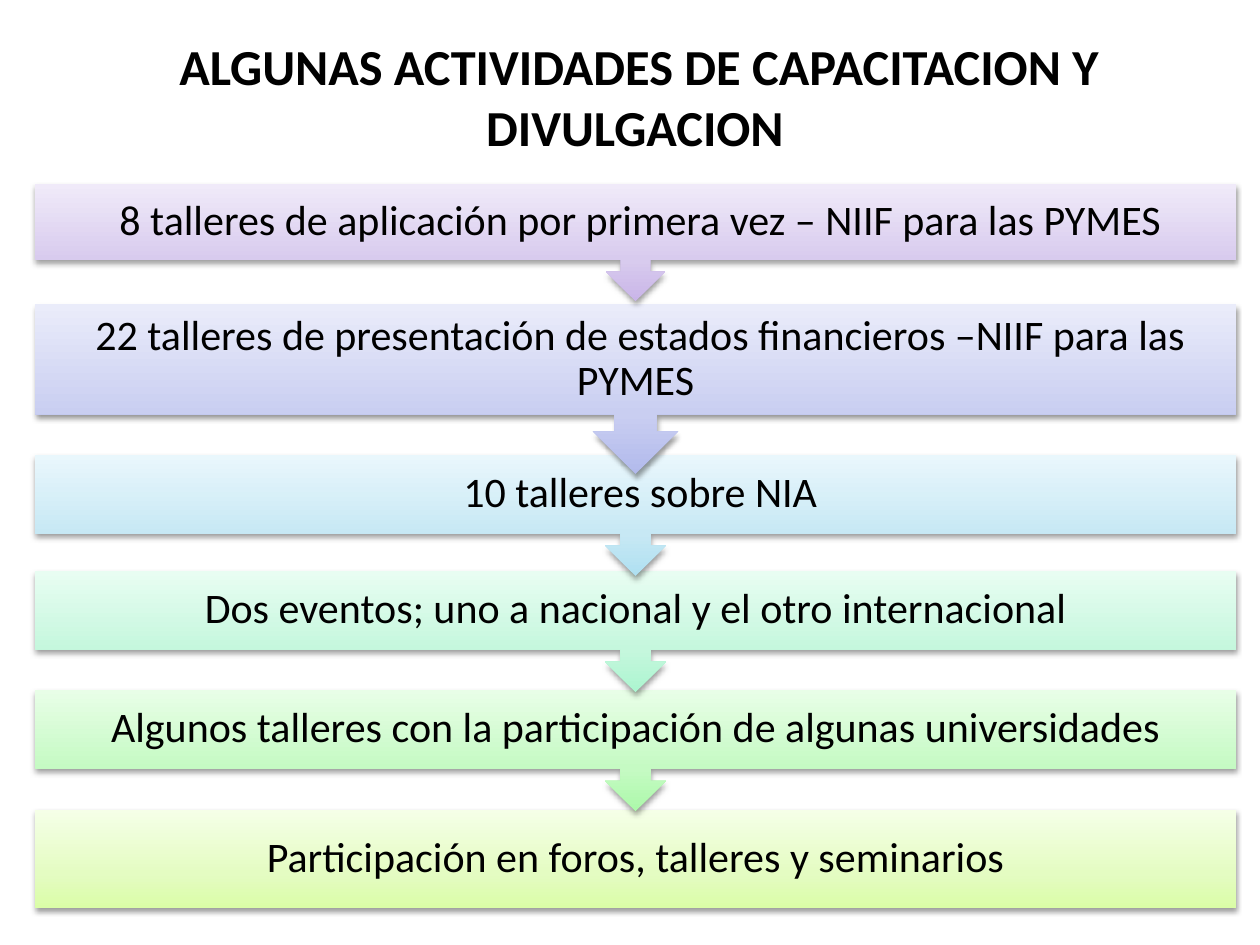
import pptx
import pptx.util
import pptx.oxml
import pptx.oxml.ns
import pptx.dml.color
import pptx.enum.shapes
import pptx.enum.text
from dataclasses import dataclass

PX = 914400 / 126
NS = pptx.oxml.ns.nsdecls("a")


@dataclass(frozen=True)
class Theme:
    font: str = "Calibri"
    ink: str = "000000"
    accent: str = "4BACC6"
    head: float = 28.8
    lead: float = 21.6
    body: float = 24


theme = Theme()


def px(num):
    return pptx.util.Emu(round(num * PX))


def style(run, size, color, bold=False):
    run.font.name = theme.font
    run.font.size = pptx.util.Pt(size)
    run.font.bold = bold
    run.font.color.rgb = pptx.dml.color.RGBColor.from_string(color)


# Top, height, text and the gradient from bottom to top
steps = [
    (184, 117, " 8 talleres de aplicación por primera vez – NIIF para las PYMES",
     ("C9B5E8", "D8CBEE", "F0EAF9")),
    (304, 170, " 22 talleres de presentación de estados financieros –NIIF para las PYMES",
     ("B2BAEC", "C9CEF1", "EAECFA")),
    (455, 121, " 10 talleres sobre NIA",
     ("AFE0F1", "C7E8F4", "E9F7FC")),
    (571, 121, "Dos eventos; uno a nacional y el otro internacional",
     ("ACF5D0", "C5F7DD", "E8FDF2")),
    (690, 121, "Algunos talleres con la participación de algunas universidades",
     ("ACF9AA", "C5FAC3", "E8FEE7")),
    (810, 98, "Participación en foros, talleres y seminarios",
     ("DAFDA7", "E4FCC2", "F5FFE7")),
]
left, width, inset = 35, 1201, 24

deck = pptx.Presentation()
deck.slide_width, deck.slide_height = px(1260), px(945)
slide = deck.slides.add_slide(deck.slide_layouts[5])
kinds = pptx.enum.shapes.MSO_SHAPE
middle = pptx.enum.text.MSO_ANCHOR.MIDDLE
center = pptx.enum.text.PP_ALIGN.CENTER

# Last step first, so that each arrow lies over the next box
for top, height, text, colors in reversed(steps):
    last = text == steps[-1][2]
    kind = kinds.RECTANGLE if last else kinds.DOWN_ARROW_CALLOUT
    box = slide.shapes.add_shape(kind, px(left), px(top), px(width), px(height))
    box.line.fill.background()

    box.fill.gradient()
    box.fill.gradient_angle = 90
    stops = box.element.spPr.find(".//" + pptx.oxml.ns.qn("a:gsLst"))
    for stop in list(stops):
        stops.remove(stop)
    for place, color in zip((0, 35, 100), colors):
        stops.append(pptx.oxml.parse_xml(
            f'<a:gs {NS} pos="{place * 1000}"><a:srgbClr val="{color}"/></a:gs>'))

    box.shadow.inherit = False
    box.element.spPr.find(pptx.oxml.ns.qn("a:effectLst")).append(pptx.oxml.parse_xml(
        f'<a:outerShdw {NS} blurRad="40000" dist="20000" dir="5400000" rotWithShape="0">'
        '<a:srgbClr val="000000"><a:alpha val="38000"/></a:srgbClr></a:outerShdw>'))

    frame = box.text_frame
    frame.text = text
    frame.word_wrap = True
    frame.vertical_anchor = middle
    frame.margin_left = frame.margin_right = px(inset)
    frame.margin_top = frame.margin_bottom = px(inset)
    para = frame.paragraphs[0]
    para.alignment = center
    para.line_spacing = 0.9
    style(para.runs[0], theme.body, theme.ink)

title = slide.shapes.title
title.left, title.top, title.width, title.height = px(64), px(37), px(1142), px(118)
title.text_frame.text = " "
title.text_frame.vertical_anchor = middle
para = title.text_frame.paragraphs[0]
para.alignment = center
style(para.runs[0], theme.lead, theme.accent, True)
name = para.add_run()
name.text = "ALGUNAS ACTIVIDADES DE CAPACITACION Y DIVULGACION"
style(name, theme.head, theme.ink, True)

deck.save("out.pptx")
